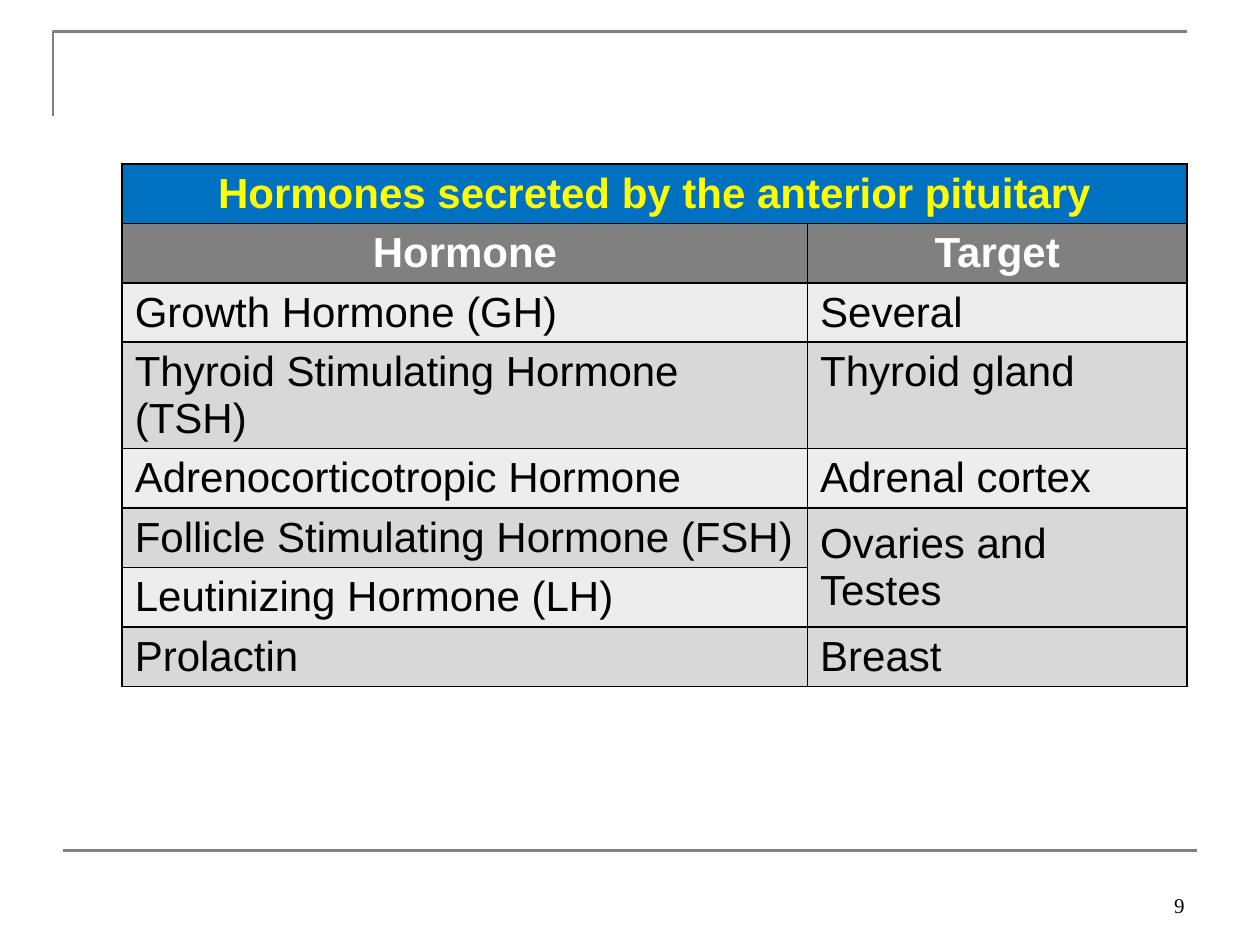
from dataclasses import dataclass

from lxml.etree import SubElement
from pptx import Presentation
from pptx.dml.color import RGBColor
from pptx.enum.shapes import MSO_CONNECTOR
from pptx.enum.text import MSO_ANCHOR, PP_ALIGN
from pptx.oxml.ns import qn
from pptx.util import Inches, Pt


@dataclass(frozen=True)
class Theme:
    frame: str = "808080"
    heading_fill: str = "0070C0"
    heading_text: str = "FFFF00"
    header_fill: str = "808080"
    header_text: str = "FFFFFF"
    bands: tuple = ("EDEDED", "D8D8D8")
    text: str = "000000"
    border: str = "000000"
    table_font: str = "Arial"
    number_font: str = "Times New Roman"
    table_size: int = 24
    number_size: int = 12
    frame_width: float = 1.5
    border_width: float = 1


THEME = Theme()
HEADING = "Hormones secreted by the anterior pituitary"
HEADERS = ("Hormone", "Target")
HORMONES = [
    ("Growth Hormone (GH)", "Several"),
    ("Thyroid Stimulating Hormone (TSH)", "Thyroid gland"),
    ("Adrenocorticotropic Hormone", "Adrenal cortex"),
    ("Follicle Stimulating Hormone (FSH)", "Ovaries and Testes"),
    ("Leutinizing Hormone (LH)", None),  # None: shares the target above
    ("Prolactin", "Breast"),
]
PAGE_NUMBER = "9"

TABLE_LEFT, TABLE_TOP = 0.97, 1.3
COLUMN_WIDTHS = (5.44, 3.01)
ROW_HEIGHT = 0.41
CORNER = [(0.42, 0.92), (0.42, 0.25), (9.42, 0.25)]
FOOTER_LINE = (0.5, 6.75, 9.5, 6.75)
NUMBER_BOX = (7.17, 6.83, 2.33, 0.5)


def color(value):
    return RGBColor.from_string(value)


def style_line(shape):
    shape.line.color.rgb = color(THEME.frame)
    shape.line.width = Pt(THEME.frame_width)


def style_paragraph(paragraph, font_name, size, text_color, bold, alignment):
    paragraph.alignment = alignment
    font = paragraph.font
    font.name, font.size, font.bold = font_name, Pt(size), bold
    font.color.rgb = color(text_color)


def add_frame(slide):
    """Draw the corner at top left and the line above the footer."""
    points = [(Inches(x), Inches(y)) for x, y in CORNER]
    builder = slide.shapes.build_freeform(*points[0])
    builder.add_line_segments(points[1:], close=False)
    corner = builder.convert_to_shape()
    corner.shadow.inherit = False
    corner.fill.background()
    style_line(corner)

    line = slide.shapes.add_connector(
        MSO_CONNECTOR.STRAIGHT, *map(Inches, FOOTER_LINE))
    style_line(line)
    SubElement(line._element.spPr, qn("a:effectLst"))


def add_borders(cell):
    properties = cell._tc.get_or_add_tcPr()
    for side in ("lnL", "lnR", "lnT", "lnB"):
        line = SubElement(properties, qn(f"a:{side}"),
                          w=str(Pt(THEME.border_width)))
        fill = SubElement(line, qn("a:solidFill"))
        SubElement(fill, qn("a:srgbClr"), val=THEME.border)


def row_style(row):
    """Return fill, text colour, bold and alignment for a table row."""
    if row == 0:
        return THEME.heading_fill, THEME.heading_text, True, PP_ALIGN.CENTER
    if row == 1:
        return THEME.header_fill, THEME.header_text, True, PP_ALIGN.CENTER
    return THEME.bands[row % 2], THEME.text, False, PP_ALIGN.LEFT


def add_hormone_table(slide):
    rows = [(HEADING, None), HEADERS, *HORMONES]
    table = slide.shapes.add_table(
        len(rows), len(COLUMN_WIDTHS), Inches(TABLE_LEFT), Inches(TABLE_TOP),
        Inches(sum(COLUMN_WIDTHS)), Inches(ROW_HEIGHT * len(rows))).table
    for column, width in zip(table.columns, COLUMN_WIDTHS):
        column.width = Inches(width)

    for row, texts in enumerate(rows):
        table.rows[row].height = Inches(ROW_HEIGHT)
        fill, text_color, bold, alignment = row_style(row)
        for column, text in enumerate(texts):
            cell = table.cell(row, column)
            add_borders(cell)
            cell.fill.solid()
            cell.fill.fore_color.rgb = color(fill)
            cell.text = text or ""
            style_paragraph(cell.text_frame.paragraphs[0], THEME.table_font,
                            THEME.table_size, text_color, bold, alignment)

    table.cell(0, 0).merge(table.cell(0, 1))
    for row, (_, target) in enumerate(HORMONES, start=2):
        if target is None:
            shared = table.cell(row - 1, 1)
            shared.merge(table.cell(row, 1))
            shared.vertical_anchor = MSO_ANCHOR.MIDDLE


def add_page_number(slide):
    frame = slide.shapes.add_textbox(*map(Inches, NUMBER_BOX)).text_frame
    frame.word_wrap = True
    frame.vertical_anchor = MSO_ANCHOR.BOTTOM
    frame.text = PAGE_NUMBER
    style_paragraph(frame.paragraphs[0], THEME.number_font,
                    THEME.number_size, THEME.text, False, PP_ALIGN.RIGHT)


def main():
    presentation = Presentation()
    presentation.slide_width, presentation.slide_height = Inches(10), Inches(7.5)
    slide = presentation.slides.add_slide(presentation.slide_layouts[6])
    add_frame(slide)
    add_hormone_table(slide)
    add_page_number(slide)
    presentation.save("out.pptx")


if __name__ == "__main__":
    main()
